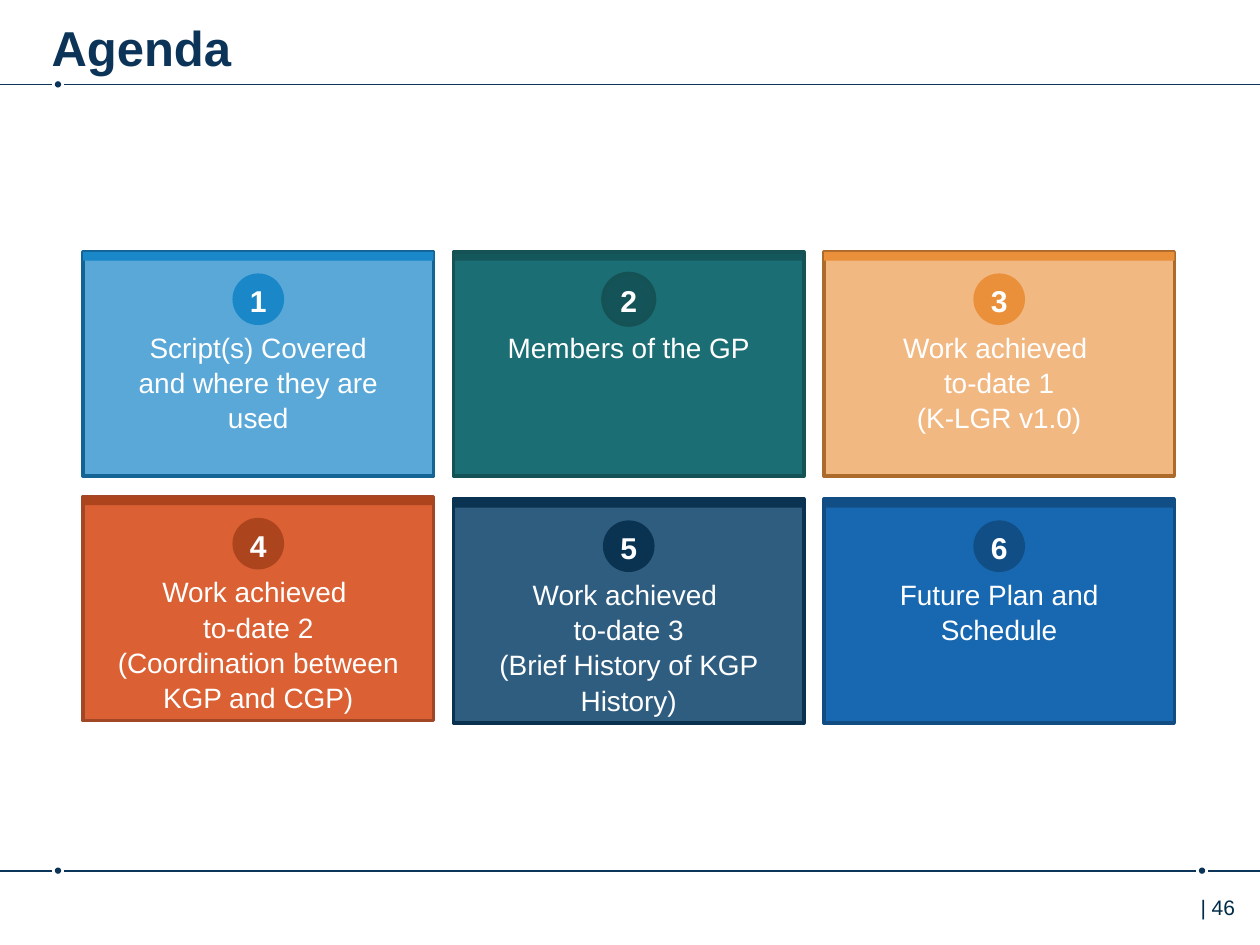
from collections import namedtuple

from lxml import etree
from pptx import Presentation
from pptx.dml.color import RGBColor
from pptx.enum.shapes import MSO_CONNECTOR, MSO_SHAPE
from pptx.enum.text import MSO_ANCHOR, MSO_AUTO_SIZE, PP_ALIGN
from pptx.oxml.ns import qn
from pptx.util import Inches, Pt

RECT, OVAL = MSO_SHAPE.RECTANGLE, MSO_SHAPE.OVAL
STRAIGHT = MSO_CONNECTOR.STRAIGHT
LEFT, CENTER = PP_ALIGN.LEFT, PP_ALIGN.CENTER

WIDTH, HEIGHT = 10, 7.5
NAVY, WHITE = "0C3458", "FFFFFF"
HEADER_Y, FOOTER_Y = 0.67, 6.91
LEFT_DOT, RIGHT_DOT, DOT = 0.46, 9.54, 0.05
DOT_GAP = 0.05

COLUMNS = 3
GRID_LEFT, GRID_TOP = 0.66, 2
CARD_W, CARD_H, BAR_H = 2.78, 1.78, 0.07
COLUMN_STEP, ROW_STEP = 2.94, 1.96
BADGE, BODY_W = 0.41, 2.27

Card = namedtuple(
    "Card", "paragraphs fill border accent fill_alpha bar_alpha badge_border lift body_w",
    defaults=(100, 100, None, 0, BODY_W))

CARDS = [
    Card(["Script(s) Covered and where they are used"],
         "1A87C9", "136495", "1A87C9", fill_alpha=72),
    Card(["Members of the GP"], "1B6F74", "145256", "145357",
         bar_alpha=80, badge_border="145256"),
    Card(["Work achieved \vto-date 1", "(K-LGR v1.0)"],
         "EA903A", "AD6B2B", "EA903A", fill_alpha=63),
    Card(["Work achieved \vto-date 2", "(Coordination between KGP and CGP)"],
         "DB6033", "A24726", "AC441E", lift=0.02, body_w=2.56),
    Card(["Work achieved \vto-date 3", "(Brief History of KGP History)"],
         "0D436C", "0A3250", "0A3251", fill_alpha=86),
    Card(["Future Plan and Schedule"], "1768B1", "114D83", "114E85"),
]


def rgb(color):
    return RGBColor.from_string(color)


def add_filled(slide, kind, box, fill, border=None, alpha=100):
    shape = slide.shapes.add_shape(kind, *map(Inches, box))
    shape.shadow.inherit = False
    shape.fill.solid()
    shape.fill.fore_color.rgb = rgb(fill)
    if alpha < 100:
        color = shape.fill._xPr.find(qn("a:solidFill"))[0]
        etree.SubElement(color, qn("a:alpha"), val=str(alpha * 1000))
    if border:
        shape.line.color.rgb = rgb(border)
        shape.line.width = Pt(2)
    else:
        shape.line.fill.background()


def write(frame, paragraphs, size, color, bold=False, align=LEFT, spacing=1.0):
    """Fill a text frame with one formatted paragraph per string."""
    frame.word_wrap = True
    frame.auto_size = MSO_AUTO_SIZE.NONE
    frame.vertical_anchor = MSO_ANCHOR.TOP
    for index, words in enumerate(paragraphs):
        paragraph = frame.add_paragraph() if index else frame.paragraphs[0]
        paragraph.text = words
        paragraph.alignment = align
        paragraph.line_spacing = spacing
        for run in paragraph.runs:
            run.font.name = "Arial"
            run.font.size = Pt(size)
            run.font.bold = bold
            run.font.color.rgb = rgb(color)


def add_text(slide, box, paragraphs, **text_format):
    frame = slide.shapes.add_textbox(*map(Inches, box)).text_frame
    write(frame, paragraphs, **text_format)


def add_rule(slide, y, dots):
    """Draw a full-width rule that is interrupted by dots."""
    start = 0
    for center in dots + [None]:
        end = WIDTH if center is None else center - DOT_GAP
        line = slide.shapes.add_connector(
            STRAIGHT, Inches(start), Inches(y), Inches(end), Inches(y))
        line.line.color.rgb = rgb(NAVY)
        line.line.width = Pt(1)
        etree.SubElement(line._element.spPr, qn("a:effectLst"))
        if center is not None:
            box = (center - DOT / 2, y - DOT / 2, DOT, DOT)
            add_filled(slide, OVAL, box, NAVY)
            start = center + DOT_GAP


def add_card(slide, index, card):
    row, column = divmod(index, COLUMNS)
    left = GRID_LEFT + column * COLUMN_STEP
    top = GRID_TOP + row * ROW_STEP - card.lift
    center = left + CARD_W / 2
    add_filled(slide, RECT, (left, top, CARD_W, CARD_H),
               card.fill, card.border, card.fill_alpha)
    add_filled(slide, RECT, (left, top, CARD_W, BAR_H),
               card.accent, alpha=card.bar_alpha)
    add_filled(slide, OVAL, (center - BADGE / 2, top + 0.17, BADGE, BADGE),
               card.accent, card.badge_border)
    add_text(slide, (center - card.body_w / 2, top + 0.56, card.body_w, 1.18),
             card.paragraphs, size=16, color=WHITE, align=CENTER, spacing=1.05)
    add_text(slide, (center - 1.04, top + 0.18, 2.08, 0.39), [str(index + 1)],
             size=17.2, color=WHITE, bold=True, align=CENTER, spacing=1.05)


def add_title(slide, words):
    title = slide.shapes.title
    title.left, title.top = Inches(0.41), Inches(0.05)
    title.width, title.height = Inches(8.76), Inches(0.49)
    frame = title.text_frame
    frame.margin_left = frame.margin_right = 0
    frame.margin_top = Inches(0.09)
    write(frame, [words], size=28, color=NAVY, bold=True)


def main():
    deck = Presentation()
    deck.slide_width, deck.slide_height = Inches(WIDTH), Inches(HEIGHT)
    slide = deck.slides.add_slide(deck.slide_layouts[5])
    add_title(slide, "Agenda")
    add_rule(slide, HEADER_Y, [LEFT_DOT])
    add_rule(slide, FOOTER_Y, [LEFT_DOT, RIGHT_DOT])
    add_text(slide, (9.43, 7.05, 0.57, 0.4), ["| 46"], size=12, color="002B49")
    for index, card in enumerate(CARDS):
        add_card(slide, index, card)
    deck.save("out.pptx")


if __name__ == "__main__":
    main()
